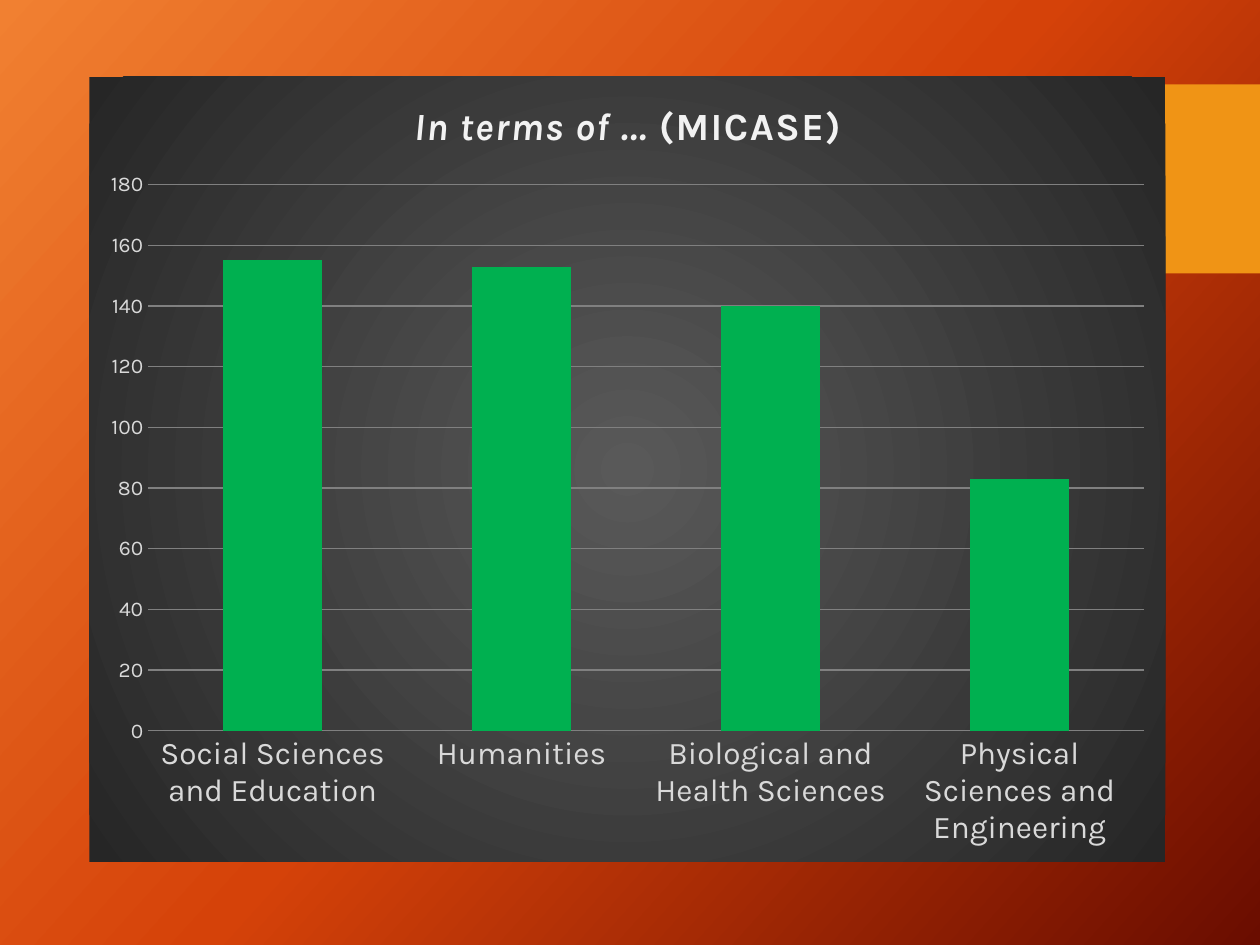
from lxml import etree
from pptx import Presentation
from pptx.chart.data import CategoryChartData
from pptx.dml.color import RGBColor
from pptx.enum.chart import XL_CHART_TYPE, XL_TICK_MARK
from pptx.enum.shapes import MSO_SHAPE
from pptx.oxml import parse_xml
from pptx.oxml.ns import qn
from pptx.util import Inches, Pt

COLUMNS = XL_CHART_TYPE.COLUMN_CLUSTERED
NO_TICK = XL_TICK_MARK.NONE
RECTANGLE = MSO_SHAPE.RECTANGLE
DRAWING = "http://schemas.openxmlformats.org/drawingml/2006/main"
FONT = "Karla"
BACKGROUND_STOPS = [(0, "F18031"), (50, "D54209"), (100, "6A0D00")]
CHART_STOPS = [(0, "595959"), (100, "262626")]
LINEAR = '<a:lin ang="2520000" scaled="0"/>'
RADIAL = ('<a:path path="circle">'
          '<a:fillToRect l="50000" t="50000" r="50000" b="50000"/></a:path>')
COUNTS = {
    "Social Sciences and Education": 155,
    "Humanities": 153,
    "Biological and Health Sciences": 140,
    "Physical Sciences and Engineering": 83,
}


def color(value):
    """Return the colour for a hex string."""
    return RGBColor.from_string(value)


def gradient_fill(stops, direction):
    """Return a gradient fill element with the given stops and direction."""
    stop_xml = "".join(
        f'<a:gs pos="{position * 1000}"><a:srgbClr val="{value}"/></a:gs>'
        for position, value in stops)
    return parse_xml(f'<a:gradFill xmlns:a="{DRAWING}" rotWithShape="1">'
                     f'<a:gsLst>{stop_xml}</a:gsLst>{direction}</a:gradFill>')


def style_font(font, size, value, bold=False, italic=False):
    """Set the typeface, size, colour and style of a font."""
    font.name = FONT
    font.size = Pt(size)
    font.bold = bold
    font.italic = italic
    font.color.rgb = color(value)


def paint_background(slide):
    """Fill the slide background with the diagonal gradient."""
    slide.background.fill.solid()
    solid = slide.element.find(".//" + qn("p:bgPr")).find(qn("a:solidFill"))
    solid.getparent().replace(solid, gradient_fill(BACKGROUND_STOPS, LINEAR))


def add_accent(slide, left, top, width, height):
    """Add the plain block at the right edge."""
    shape = slide.shapes.add_shape(RECTANGLE, left, top, width, height)
    shape.shadow.inherit = False
    shape.fill.solid()
    shape.fill.fore_color.rgb = color("F09415")
    shape.line.fill.background()


def paint_chart_area(chart):
    """Give the chart area a radial gradient and no outline."""
    properties = etree.Element(qn("c:spPr"))
    properties.append(gradient_fill(CHART_STOPS, RADIAL))
    line = etree.SubElement(properties, qn("a:ln"))
    etree.SubElement(line, qn("a:noFill"))
    chart.element.find(qn("c:chart")).addnext(properties)


def add_chart_title(chart):
    """Write the title with its phrase in italics."""
    chart.has_title = True
    chart.chart_title.include_in_layout = False
    paragraph = chart.chart_title.text_frame.paragraphs[0]
    for text, italic in (("In terms of ... ", True), ("(MICASE)", False)):
        run = paragraph.add_run()
        run.text = text
        style_font(run.font, 22, "F2F2F2", bold=True, italic=italic)
        run.font._element.set("spc", "100")


def style_axis(axis, size):
    """Set the labels of an axis and hide its line and ticks."""
    axis.major_tick_mark = NO_TICK
    axis.minor_tick_mark = NO_TICK
    axis.format.line.fill.background()
    style_font(axis.tick_labels.font, size, "D9D9D9")


def add_discipline_chart(slide, left, top, width, height):
    """Add the column chart of counts by discipline."""
    data = CategoryChartData()
    data.categories = list(COUNTS)
    data.add_series("Series 1", list(COUNTS.values()))
    chart = slide.shapes.add_chart(
        COLUMNS, left, top, width, height, data).chart
    style_font(chart.font, 10, "FFFFFF")
    chart.has_legend = False
    paint_chart_area(chart)
    add_chart_title(chart)
    style_axis(chart.category_axis, 18)

    value_axis = chart.value_axis
    style_axis(value_axis, 12)
    value_axis.minimum_scale = 0
    value_axis.maximum_scale = 180
    value_axis.major_unit = 20
    value_axis.has_major_gridlines = True
    grid_line = value_axis.major_gridlines.format.line
    grid_line.color.rgb = color("808080")
    grid_line.width = Pt(0.75)

    plot = chart.plots[0]
    plot.gap_width = 150
    plot.vary_by_categories = False
    fill = plot.series[0].format.fill
    fill.solid()
    fill.fore_color.rgb = color("00B050")


def main():
    """Build and save the presentation."""
    presentation = Presentation()
    presentation.slide_width = Inches(10)
    presentation.slide_height = Inches(7.5)
    slide = presentation.slides.add_slide(presentation.slide_layouts[6])
    paint_background(slide)
    add_accent(slide, Inches(8.43), Inches(0.67), Inches(1.57), Inches(1.5))
    add_discipline_chart(
        slide, Inches(0.71), Inches(0.61), Inches(8.54), Inches(6.23))
    presentation.save("out.pptx")


if __name__ == "__main__":
    main()
